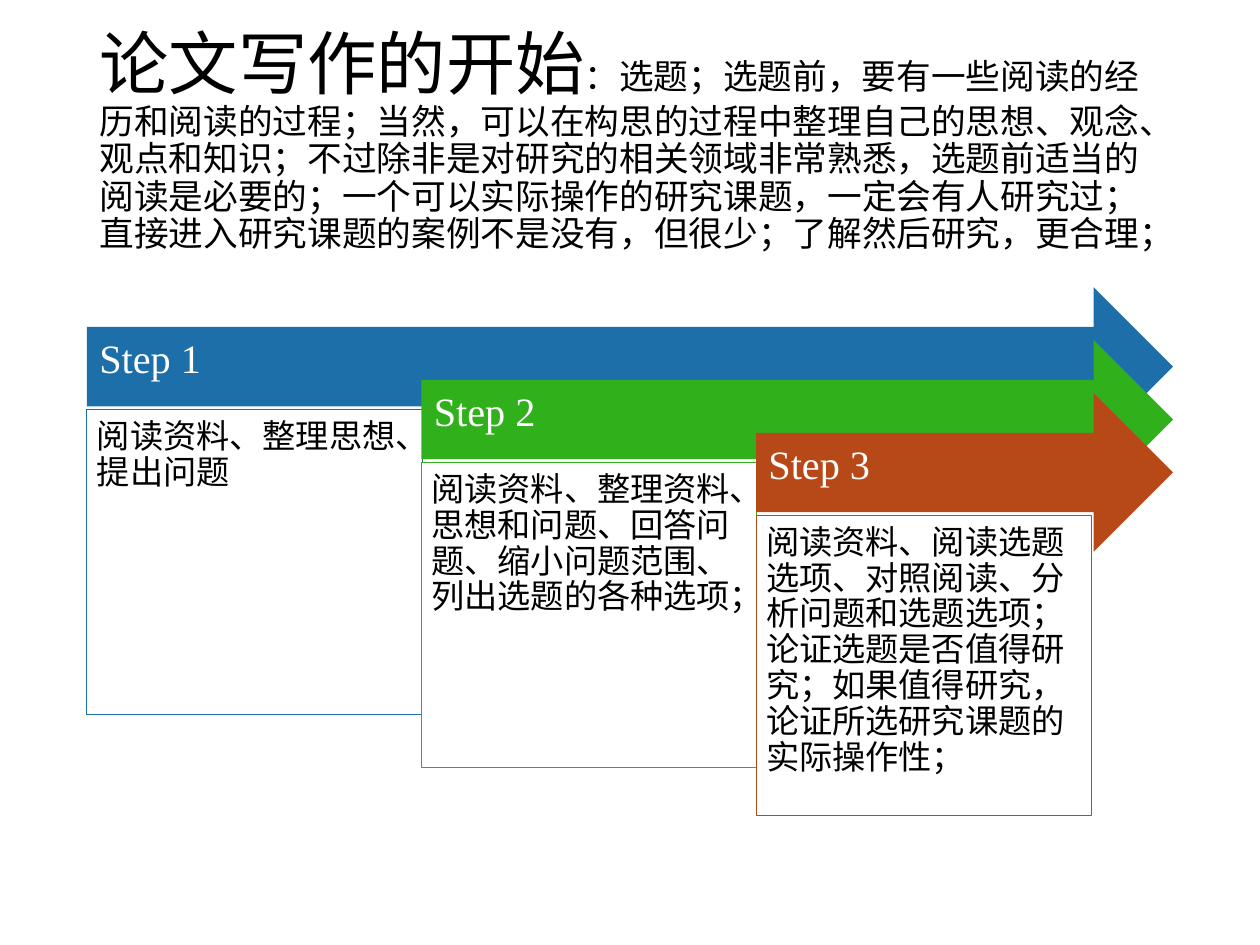
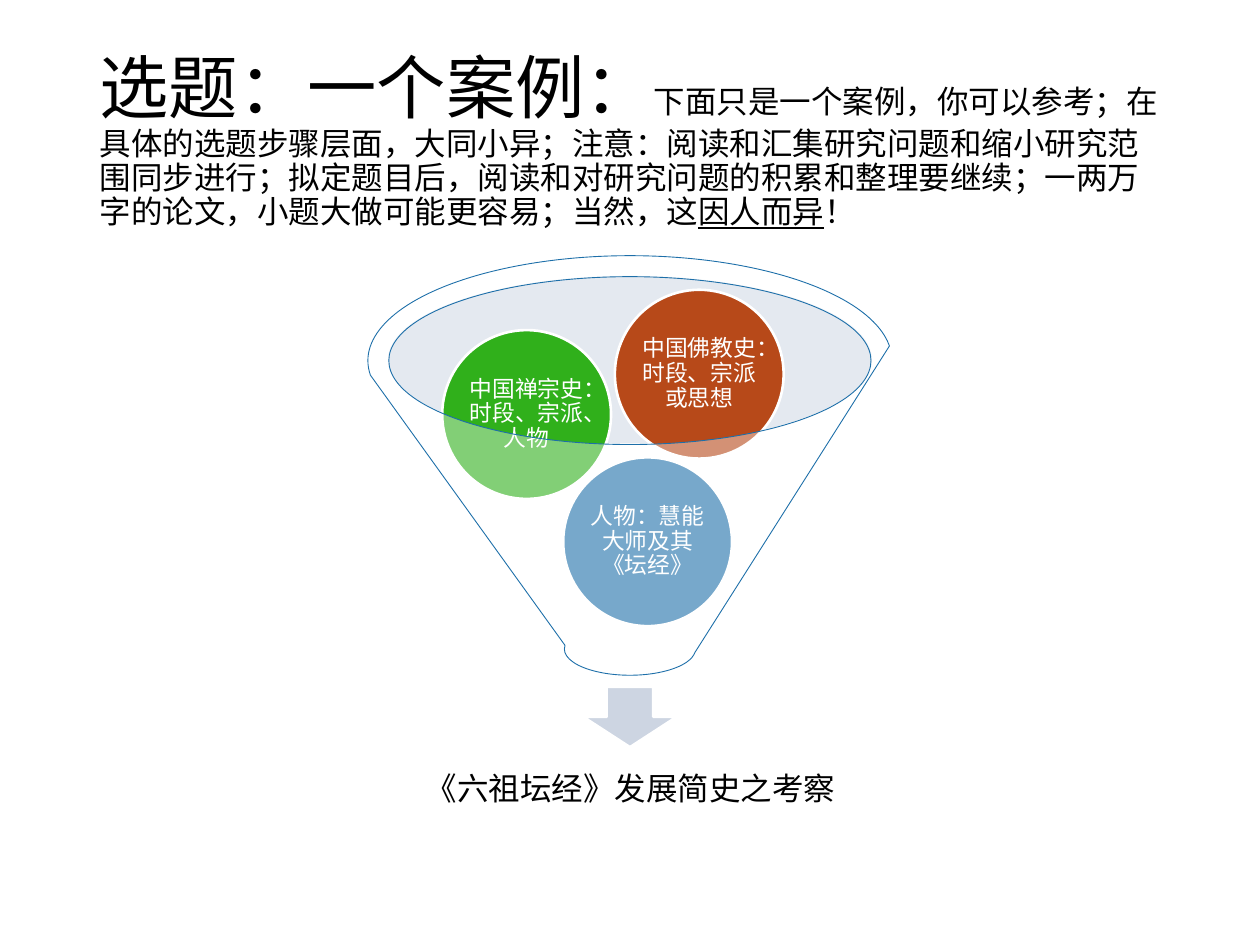
"""Build two slides on choosing a thesis topic: three steps and a funnel example."""
import pptx
import pptx.dml.color
import pptx.enum.lang
import pptx.enum.shapes
import pptx.enum.text
import pptx.oxml
import pptx.util
from pptx.util import Inches

SHAPE = pptx.enum.shapes.MSO_SHAPE
ALIGN = pptx.enum.text.PP_ALIGN
ANCHOR = pptx.enum.text.MSO_ANCHOR


class Theme:
    """Colours, font and type sizes shared by both slides."""
    font = "Times New Roman"
    blue, green, rust = "1D6FA9", "30B01B", "B74919"
    black, white, mist, pale = "000000", "FFFFFF", "BDC8DA", "CDD5E2"
    headline, intro, example, step, body, topic = 39.6, 19.8, 18, 23, 19, 13
    thin, rim = 0.5, 1.5
    veil = 40


STEPS_TITLE = [
    ("论文写作的开始", Theme.headline),
    ("：选题；选题前，要有一些阅读的经历和阅读的过程；当然，可以在构思的过程中整理自己的思想、观念、"
     "观点和知识；不过除非是对研究的相关领域非常熟悉，选题前适当的阅读是必要的；一个可以实际操作的研究课题，"
     "一定会有人研究过；直接进入研究课题的案例不是没有，但很少；了解然后研究，更合理；", Theme.intro),
]
STEPS = [
    ("Step 1", "阅读资料、整理思想、提出问题", Theme.blue, 2.42),
    ("Step 2", "阅读资料、整理资料、思想和问题、回答问题、缩小问题范围、列出选题的各种选项；",
     Theme.green, 2.42),
    ("Step 3", "阅读资料、阅读选题选项、对照阅读、分析问题和选题选项；论证选题是否值得研究；"
     "如果值得研究，论证所选研究课题的实际操作性；", Theme.rust, 2.38),
]
EXAMPLE_TITLE = [
    ("选题：一个案例：", Theme.headline),
    ("下面只是一个案例，你可以参考；在具体的选题步骤层面，大同小异；注意：阅读和汇集研究问题和缩小研究范围"
     "同步进行；拟定题目后，阅读和对研究问题的积累和整理要继续；一两万字的论文，小题大做可能更容易；当然，这",
     Theme.example),
    ("因人而异", Theme.example, True),
    ("！", Theme.example),
]
TOPICS = [
    ("人物：慧能大师及其《坛经》", Theme.blue, 4.47, 3.63),
    ("中国禅宗史：时段、宗派、人物", Theme.green, 3.51, 2.62),
    ("中国佛教史：时段、宗派或思想", Theme.rust, 4.88, 2.3),
]
OUTCOME = "《六祖坛经》发展简史之考察"

LEFT, RIGHT = 0.69, 9.31
STEP_TOP, STEP_SHIFT, STEP_DROP = 2.28, 0.42, 0.97
ARROW_HEIGHT, BOX_WIDTH = 1.26, 2.66
TOPIC_SIZE = 1.34


def rgb(colour):
    return pptx.dml.color.RGBColor.from_string(colour)


def style_run(run, size, colour):
    run.font.name = Theme.font
    run.font.size = pptx.util.Pt(size)
    run.font.color.rgb = rgb(colour)
    run.font.language_id = pptx.enum.lang.MSO_LANGUAGE_ID.SIMPLIFIED_CHINESE


def write(shape, words, size, colour, insets, align=ALIGN.LEFT, anchor=ANCHOR.MIDDLE):
    frame = shape.text_frame
    frame.text = words
    frame.word_wrap = True
    frame.vertical_anchor = anchor
    frame.margin_left, frame.margin_top, frame.margin_right, frame.margin_bottom = map(Inches, insets)
    paragraph = frame.paragraphs[0]
    paragraph.alignment = align
    paragraph.line_spacing = 0.9
    style_run(paragraph.runs[0], size, colour)


def draw(slide, kind, box, fill, line=None, width=Theme.thin, alpha=None):
    shape = slide.shapes.add_shape(kind, *map(Inches, box))
    shape.shadow.inherit = False
    shape.fill.solid()
    shape.fill.fore_color.rgb = rgb(fill)
    if alpha:
        tint = shape._element.spPr.find(".//" + pptx.oxml.ns.qn("a:srgbClr"))
        tint.append(pptx.oxml.parse_xml(
            f'<a:alpha {pptx.oxml.ns.nsdecls("a")} val="{alpha * 1000}"/>'))
    if line:
        shape.line.color.rgb = rgb(line)
        shape.line.width = pptx.util.Pt(width)
    else:
        shape.line.fill.background()
    return shape


def titled_slide(deck, parts):
    slide = deck.slides.add_slide(deck.slide_layouts[5])
    title = slide.shapes.title
    title.left, title.top, title.width, title.height = map(Inches, (LEFT, 0.4, RIGHT - LEFT, 1.45))
    frame = title.text_frame
    frame.auto_size = pptx.enum.text.MSO_AUTO_SIZE.NONE
    frame.vertical_anchor = ANCHOR.MIDDLE
    paragraph = frame.paragraphs[0]
    paragraph.alignment = ALIGN.LEFT
    paragraph.line_spacing = 0.9
    for words, size, *underlined in parts:
        run = paragraph.add_run()
        run.text = words
        style_run(run, size, Theme.black)
        if underlined:
            run.font.underline = True
    return slide


def add_steps(slide):
    for index, (label, task, colour, height) in enumerate(STEPS):
        left = LEFT + index * (BOX_WIDTH - 0.005)
        top = STEP_TOP + index * STEP_SHIFT
        arrow = draw(slide, SHAPE.RIGHT_ARROW, (left, top, RIGHT - left, ARROW_HEIGHT), colour)
        write(arrow, label, Theme.step, Theme.white, (0.1, 0.1, 0.28, 0.2))
        box = draw(slide, SHAPE.RECTANGLE, (left, top + STEP_DROP, BOX_WIDTH, height),
                   Theme.white, colour)
        write(box, task, Theme.body, Theme.black, [0.08] * 4, anchor=ANCHOR.TOP)


def add_funnel(slide):
    draw(slide, SHAPE.OVAL, (3.08, 2.19, 3.84, 1.33), Theme.mist, alpha=Theme.veil)
    draw(slide, SHAPE.DOWN_ARROW, (4.63, 5.45, 0.74, 0.48), Theme.pale, Theme.white, Theme.rim)
    outcome = slide.shapes.add_textbox(*map(Inches, (3.22, 5.83, 3.57, 0.89)))
    write(outcome, OUTCOME, Theme.example, Theme.black, [0.14] * 4, ALIGN.CENTER)
    for words, colour, left, top in TOPICS:
        topic = draw(slide, SHAPE.OVAL, (left, top, TOPIC_SIZE, TOPIC_SIZE),
                     colour, Theme.white, Theme.rim)
        write(topic, words, Theme.topic, Theme.white, [0.02] * 4, ALIGN.CENTER)
    draw(slide, SHAPE.FUNNEL, (2.92, 2.03, 4.16, 3.33), Theme.white, Theme.blue, alpha=Theme.veil)


def main():
    deck = pptx.Presentation()
    deck.slide_width, deck.slide_height = Inches(10), Inches(7.5)
    add_steps(titled_slide(deck, STEPS_TITLE))
    add_funnel(titled_slide(deck, EXAMPLE_TITLE))
    deck.save("out.pptx")


if __name__ == "__main__":
    main()
